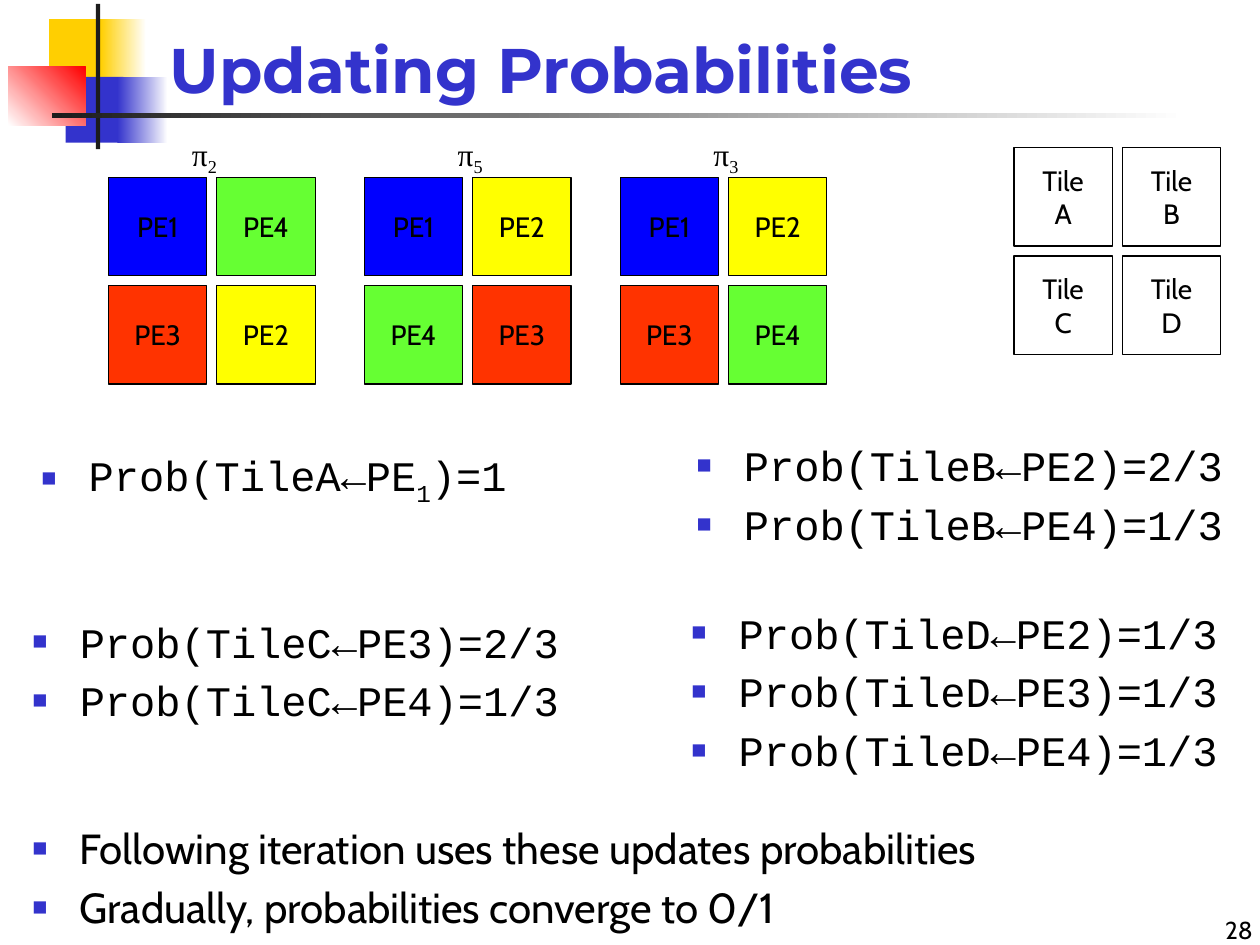
from lxml.etree import SubElement as Sub
from pptx import Presentation
from pptx.dml.color import RGBColor as Rgb
from pptx.enum.shapes import MSO_SHAPE as Kind
from pptx.enum.text import MSO_ANCHOR as Anchor, MSO_AUTO_SIZE as Fit, PP_ALIGN as Align
from pptx.oxml.ns import qn
from pptx.util import Pt

HUES = {
    "gold": "FFCF01", "navy": "3333CC", "red": "FF0000", "dark": "1C1C1C",
    "white": "FFFFFF", "black": "000000",
    "PE1": "0000FF", "PE2": "FFFF00", "PE3": "FF3300", "PE4": "66FF33",
}


def hue(name):
    return Rgb.from_string(HUES[name])


def write(frame, lines, size, font, tint="black", bold=False, align=Align.LEFT,
          anchor=Anchor.TOP, wrap=True, dots=False):
    frame.word_wrap = wrap
    frame.vertical_anchor = anchor
    for i, line in enumerate(lines):
        para = frame.add_paragraph() if i else frame.paragraphs[0]
        para.alignment = align
        if dots:
            props = para._p.get_or_add_pPr()
            props.set("marL", str(Pt(27)))
            props.set("indent", str(-Pt(27)))
            Sub(Sub(props, qn("a:spcBef")), qn("a:spcPct"), val="20000")
            Sub(Sub(props, qn("a:buClr")), qn("a:srgbClr"), val=HUES["navy"])
            Sub(props, qn("a:buSzPct"), val="60000")
            Sub(props, qn("a:buFont"), typeface="Arial")
            Sub(props, qn("a:buChar"), char="■")
        for j, part in enumerate(line.split("_")):
            for k, word in enumerate(part.split("\n")):
                if k:
                    para.add_line_break()
                run = para.add_run()
                run.text = word
                run.font.size = Pt(size)
                run.font.name = font
                run.font.bold = bold
                run.font.color.rgb = hue(tint)
                if j % 2:
                    run._r.get_or_add_rPr().set("baseline", "-25000")


deck = Presentation()
deck.slide_width, deck.slide_height = Pt(720), Pt(540)
slide = deck.slides.add_slide(deck.slide_layouts[6])
shapes = slide.shapes

bars = [
    (28, 11, 34.5, 37.5, ["gold"], 0),
    (57.5, 11, 26, 37.5, ["gold", "white"], 0),
    (37.5, 44, 33, 37.5, ["navy"], 0),
    (67, 44, 29, 37.5, ["navy", "white"], 0),
    (4.8, 38.2, 44, 33.5, ["white", "red"], 45),
    (54.8, 2.3, 2.4, 83, ["dark"], 0),
    (29.7, 64.8, 648, 2.4, ["dark", "white"], 0),
]
for left, top, wide, high, tints, angle in bars:
    bar = shapes.add_shape(Kind.RECTANGLE, Pt(left), Pt(top), Pt(wide), Pt(high))
    bar.shadow.inherit = False
    bar.line.fill.background()
    if len(tints) == 1:
        bar.fill.solid()
        bar.fill.fore_color.rgb = hue(tints[0])
    else:
        bar.fill.gradient()
        bar.fill.gradient_angle = angle
        for stop, tint in zip(bar.fill.gradient_stops, tints):
            stop.color.rgb = hue(tint)

title = shapes.add_textbox(Pt(90), Pt(-2.2), Pt(630), Pt(66.2))
write(title.text_frame, ["Updating Probabilities"], 36, "Montserrat", "navy", True,
      anchor=Anchor.BOTTOM)

grids = [
    (62, 101.3, ["PE1", "PE4", "PE3", "PE2"]),
    (208.2, 101.3, ["PE1", "PE2", "PE4", "PE3"]),
    (354.4, 101.3, ["PE1", "PE2", "PE3", "PE4"]),
    (579.4, 84.4, ["Tile\nA", "Tile\nB", "Tile\nC", "Tile\nD"]),
]
for left, top, names in grids:
    group = shapes.add_group_shape()
    for i, name in enumerate(names):
        row, col = divmod(i, 2)
        tile = group.shapes.add_shape(Kind.RECTANGLE, Pt(left + 61.9 * col),
                                      Pt(top + 61.9 * row), Pt(56.2), Pt(56.2))
        tile.shadow.inherit = False
        tile.line.color.rgb = hue("black")
        tile.line.width = Pt(0.75)
        if name in HUES:
            tile.fill.solid()
            tile.fill.fore_color.rgb = hue(name)
        else:
            tile.fill.background()
        write(tile.text_frame, [name], 16, "Cabin", align=Align.CENTER,
              anchor=Anchor.MIDDLE, wrap=False)

for left, sub in [(101.5, 2), (253.4, 5), (399.6, 3)]:
    label = shapes.add_textbox(Pt(left), Pt(73.4), Pt(29.5), Pt(28.8))
    write(label.text_frame, [f"π_{sub}"], 18, "Times New Roman",
          align=Align.RIGHT, wrap=False)
    label.text_frame.auto_size = Fit.SHAPE_TO_FIT_TEXT

mono = "Courier New"
lists = [
    (16.6, 253.4, 335, 68, mono, ["Prob(TileA←PE_1_)=1"]),
    (391, 247.7, 335, 101.5, mono, ["Prob(TileB←PE2)=2/3", "Prob(TileB←PE4)=1/3"]),
    (11.5, 348.5, 335, 106.5, mono, ["Prob(TileC←PE3)=2/3", "Prob(TileC←PE4)=1/3"]),
    (388, 343.4, 335, 124, mono,
     ["Prob(TileD←PE2)=1/3", "Prob(TileD←PE3)=1/3", "Prob(TileD←PE4)=1/3"]),
    (11.5, 466.6, 708.5, 73.4, "Cabin",
     ["Following iteration uses these updates probabilities",
      "Gradually, probabilities converge to 0/1"]),
]
for left, top, wide, high, font, lines in lists:
    box = shapes.add_textbox(Pt(left), Pt(top), Pt(wide), Pt(high))
    write(box.text_frame, lines, 24, font, dots=True)

page = shapes.add_textbox(Pt(573), Pt(507), Pt(150), Pt(36))
write(page.text_frame, ["28"], 14, "Cabin", align=Align.RIGHT, anchor=Anchor.BOTTOM)

deck.save("out.pptx")
